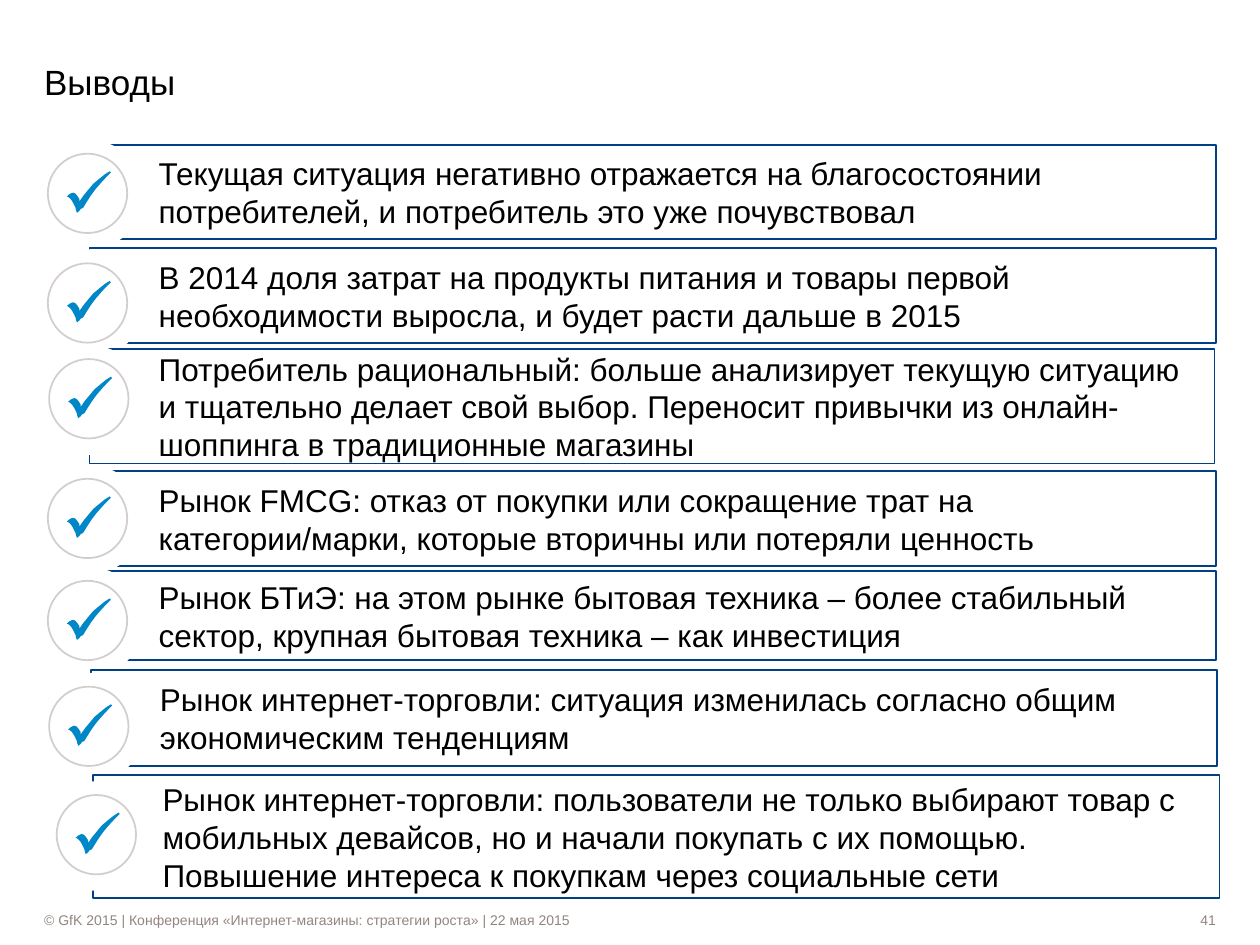
"""Build the conclusions slide: seven checked statements in outlined bars."""
from pptx import Presentation
from pptx.dml.color import RGBColor
from pptx.enum.shapes import MSO_SHAPE
from pptx.enum.text import MSO_ANCHOR, PP_ALIGN
from pptx.util import Inches, Pt

HUES = {"navy": "004186", "blue": "0087C8", "ring": "D3CECC",
        "gray": "928580", "white": "FFFFFF", "black": "000000"}
FEET = [
    (0.35, 7.72, "white", PP_ALIGN.LEFT,
     "© GfK 2015 | Конференция «Интернет-магазины: стратегии роста» | 22 мая 2015"),
    (8.23, 1.42, None, PP_ALIGN.RIGHT, "41"),
]
ROWS = [
    (0.71, 1.15, 8.94, 0.75, None, 0.38, 1.22,
     "Текущая ситуация негативно отражается на благосостоянии "
     "потребителей, и потребитель это уже почувствовал"),
    (0.71, 1.97, 8.94, 0.75, None, 0.38, 2.09,
     "В 2014 доля затрат на продукты питания и товары первой "
     "необходимости выросла, и будет расти дальше в 2015"),
    (0.71, 2.77, 8.93, 0.91, None, 0.39, 2.85,
     "Потребитель рациональный: больше анализирует текущую ситуацию "
     "и тщательно делает свой выбор. Переносит привычки из онлайн-шоппинга в традиционные магазины"),
    (0.71, 3.74, 8.94, 0.75, None, 0.38, 3.80,
     "Рынок FMCG: отказ от покупки или сокращение трат на "
     "категории/марки, которые вторичны или потеряли ценность"),
    (0.71, 4.53, 8.94, 0.71, None, 0.38, 4.61,
     "Рынок БТиЭ: на этом рынке бытовая техника – более стабильный "
     "сектор, крупная бытовая техника – как инвестиция"),
    (0.72, 5.32, 8.94, 0.76, None, 0.39, 5.45,
     "Рынок интернет-торговли: ситуация изменилась согласно общим "
     "экономическим тенденциям"),
    (0.74, 6.15, 8.94, 0.98, "white", 0.45, 6.31,
     "Рынок интернет-торговли: пользователи не только выбирают товар с "
     "мобильных девайсов, но и начали покупать с их помощью. "
     "Повышение интереса к покупкам через социальные сети"),
]
TICK = [
    ((35, 1), (35, 1), (35, 1)), ((32, 4), (28, 8), (23, 14)),
    ((19, 19), (16, 24), (13, 29)), ((11, 30), (11, 30), (11, 30)),
    ((10, 32), (9, 32), (8, 33)), ((8, 32), (7, 31), (7, 29)),
    ((6, 27), (6, 27), (6, 27)), ((5, 25), (4, 23), (3, 22)),
    ((2, 21), (1, 20), (0, 20)), ((2, 18), (4, 17), (5, 17)),
    ((7, 17), (8, 19), (10, 22)), ((10, 24), (10, 24), (10, 24)),
    ((13, 19), (17, 15), (21, 10)), ((26, 6), (30, 2), (34, 0)),
]


def paint(shape, fill=None, line=None):
    shape.shadow.inherit = False
    if fill:
        shape.fill.solid()
        shape.fill.fore_color.rgb = RGBColor.from_string(HUES[fill])
    else:
        shape.fill.background()
    if line:
        shape.line.color.rgb = RGBColor.from_string(HUES[line])
        shape.line.width = Pt(1)
    else:
        shape.line.fill.background()


def write(shape, text, size, hue, pads=(0, 0, 0, 0), align=PP_ALIGN.LEFT):
    frame = shape.text_frame
    frame.word_wrap = True
    frame.vertical_anchor = MSO_ANCHOR.MIDDLE
    frame.margin_left, frame.margin_top, frame.margin_right, frame.margin_bottom = map(Inches, pads)
    para = frame.paragraphs[0]
    para.alignment = align
    run = para.add_run()
    run.text = text
    run.font.size = Pt(size)
    run.font.name = "Arial"
    run.font.color.rgb = RGBColor.from_string(HUES[hue])


deck = Presentation()
deck.slide_width, deck.slide_height = Inches(10), Inches(7.5)
slide = deck.slides.add_slide(deck.slide_layouts[6])
shapes = slide.shapes

curve = [(34, 0)]
for one, two, end in TICK:
    start = curve[-1]
    steps = 1 if one == end else 3
    for step in range(1, steps + 1):
        t = step / steps
        curve.append(tuple(
            (1 - t) ** 3 * a + 3 * (1 - t) ** 2 * t * b + 3 * (1 - t) * t ** 2 * c + t ** 3 * d
            for a, b, c, d in zip(start, one, two, end)))

for left, width, fill, align, text in FEET:
    foot = shapes.add_shape(MSO_SHAPE.RECTANGLE, Inches(left), Inches(7.22), Inches(width), Inches(0.16))
    paint(foot, fill)
    write(foot, text, 8, "gray", align=align)

for row in ROWS:
    left, top, width, height, fill, x, y, text = row
    if row is ROWS[-1]:
        title = shapes.add_textbox(Inches(0.35), Inches(0.29), Inches(8.54), Inches(0.71))
        write(title, "Выводы", 20, "black")
    bar = shapes.add_shape(MSO_SHAPE.RECTANGLE, Inches(left), Inches(top), Inches(width), Inches(height))
    paint(bar, fill, "navy")
    write(bar, text, 18, "black", (0.55, 0.05, 0.1, 0.05))

    badge = shapes.add_group_shape().shapes
    for gap, size, inner, line in [(0.11, 0.87, "white", None), (0, 0.63, None, "ring")]:
        disc = badge.add_shape(MSO_SHAPE.OVAL, Inches(x - gap), Inches(y - gap),
                               Inches(size), Inches(size))
        paint(disc, inner, line)
    path = [(Inches(x + 0.15 + a / 100), Inches(y + 0.14 + b / 100)) for a, b in curve]
    pen = badge.build_freeform(*path[0])
    pen.add_line_segments(path[1:], close=True)
    paint(pen.convert_to_shape(), "blue")

deck.save("out.pptx")
